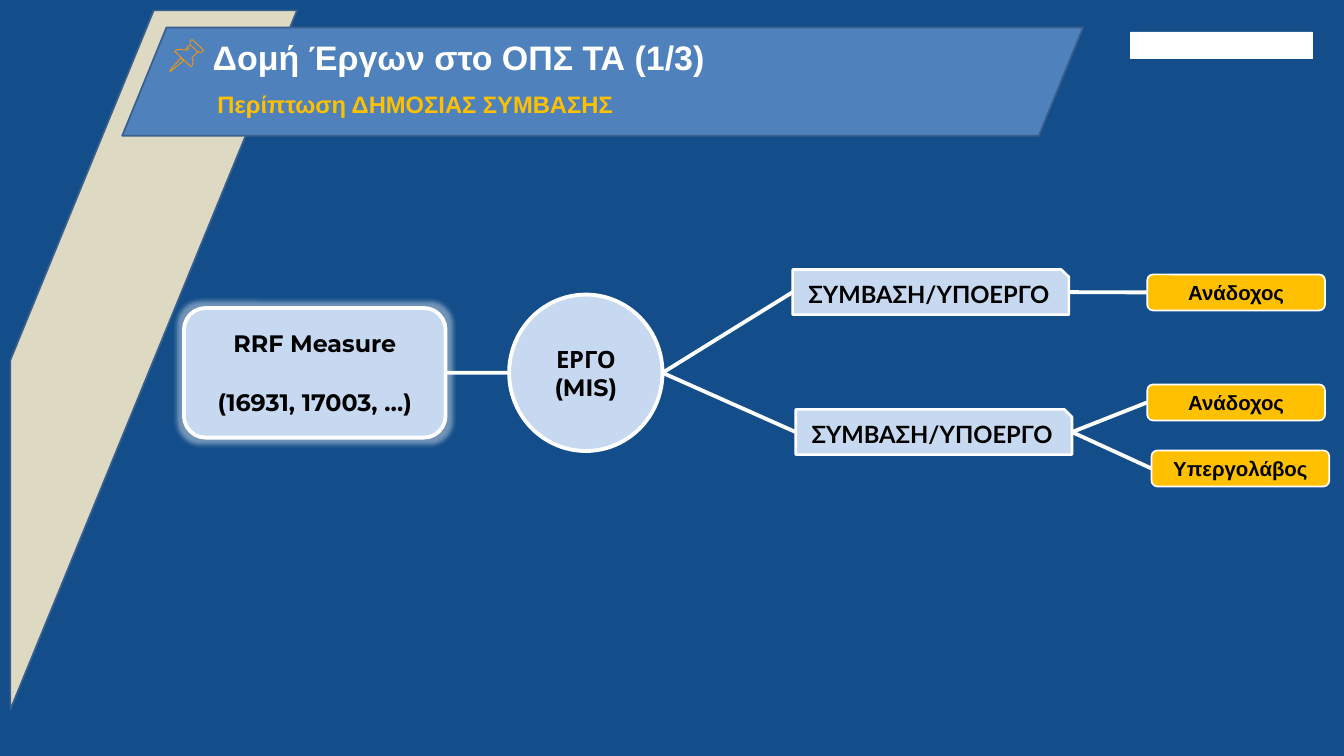
from lxml import etree
from pptx import Presentation
from pptx.dml.color import RGBColor
from pptx.enum.shapes import MSO_CONNECTOR, MSO_SHAPE
from pptx.enum.text import MSO_ANCHOR as ANCHOR, MSO_AUTO_SIZE as AUTO_SIZE, PP_ALIGN as ALIGN
from pptx.oxml import parse_xml
from pptx.oxml.ns import nsdecls, qn
from pptx.util import Inches, Pt

NAVY, BAND, EDGE, SAND = "134E8A", "4F81BD", "3A5F8C", "DDD9C3"
PALE, AMBER, ORANGE, WHITE, BLACK = "C6D9F1", "FFC000", "FF9800", "FFFFFF", "000000"
TOP, LEFT, BOTTOM, RIGHT = range(4)

# Pushpin outlines in hundredths of an inch from its corner: points, closed
PIN_PARTS = [
    ([(18, 30), (1, 49), (0, 52), (3, 50), (23, 34)], True),
    ([(33, 8), (46, 20), (50, 21), (54, 19), (55, 17), (37, 0), (35, 0), (33, 3)], True),
    ([(33, 8), (24, 17), (18, 16), (12, 16), (8, 19), (9, 20), (33, 43),
      (35, 44), (37, 41), (38, 36), (36, 29), (46, 20)], False),
    ([(26, 18), (32, 13)], False),
]


def color(value):
    return RGBColor.from_string(value)


def write(shape, lines, font, size, text_color, align=ALIGN.CENTER,
          anchor=ANCHOR.MIDDLE, gap=0):
    frame = shape.text_frame
    frame.word_wrap = True
    frame.auto_size = AUTO_SIZE.NONE
    frame.vertical_anchor = anchor
    frame.text = "\n".join(lines)
    for index, paragraph in enumerate(frame.paragraphs):
        paragraph.alignment = align
        if index and gap:
            paragraph.space_before = Pt(gap)
        paragraph.font.name = font
        paragraph.font.size = Pt(size)
        paragraph.font.bold = True
        paragraph.font.color.rgb = color(text_color)


def place(shape, box):
    shape.left, shape.top, shape.width, shape.height = map(Inches, box)


def add_block(slide, kind, box, fill, line, line_width):
    shape = slide.shapes.add_shape(kind, *map(Inches, box))
    shape.shadow.inherit = False
    shape.fill.solid()
    shape.fill.fore_color.rgb = color(fill)
    shape.line.color.rgb = color(line)
    shape.line.width = Pt(line_width)
    return shape


def add_glow(shape):
    effects = shape.element.spPr.find(qn("a:effectLst"))
    effects.append(parse_xml(
        f'<a:glow {nsdecls("a")} rad="139700"><a:srgbClr val="{WHITE}">'
        '<a:alpha val="40000"/></a:srgbClr></a:glow>'))


def link(slide, start, end, source=None, target=None):
    connector = slide.shapes.add_connector(
        MSO_CONNECTOR.STRAIGHT, *map(Inches, (*start, *end)))
    connector.line.color.rgb = color(WHITE)
    connector.line.width = Pt(4.5)
    etree.SubElement(connector.element.spPr, qn("a:effectLst"))
    if source is not None:
        connector.begin_connect(source, RIGHT)
    if target is not None:
        connector.end_connect(target, LEFT)


def add_pin(slide, left, top):
    for points, closed in PIN_PARTS:
        builder = slide.shapes.build_freeform(*points[0], scale=Inches(0.01))
        builder.add_line_segments(points[1:], close=closed)
        part = builder.convert_to_shape(Inches(left), Inches(top))
        part.shadow.inherit = False
        part.fill.background()
        part.line.color.rgb = color(ORANGE)
        part.line.width = Pt(0.96)


def add_header(slide, left, top, width, height):
    # Sloping stripe and title band
    add_block(slide, MSO_SHAPE.DIAGONAL_STRIPE,
              (left - 1.83, top - 0.28, 4.69, 11.44), SAND, EDGE, 2)
    band = add_block(slide, MSO_SHAPE.PARALLELOGRAM, (left, top, width, height), BAND, EDGE, 2)
    band.adjustments[0] = 0.409

    # Title, raised above the band
    title = slide.shapes.title
    title.element.getparent().append(title.element)
    place(title, (left + 1.38, top + 0.1, 11.66, 0.77))
    write(title, ["Δομή Έργων στο ΟΠΣ ΤΑ (1/3)"], "Arial", 40, WHITE, ALIGN.LEFT, ANCHOR.TOP)
    add_pin(slide, left + 0.78, top + 0.2)

    # Subtitle
    subtitle = slide.shapes.add_textbox(
        *map(Inches, (left + 1.46, top + 0.97, 9.99, 0.57)))
    write(subtitle, ["Περίπτωση ΔΗΜΟΣΙΑΣ ΣΥΜΒΑΣΗΣ"], "Arial", 28, AMBER, ALIGN.LEFT, ANCHOR.TOP)


def add_contract(slide, left, top):
    contract = add_block(slide, MSO_SHAPE.SNIP_1_RECTANGLE,
                         (left, top, 4.52, 0.74), PALE, WHITE, 3)
    write(contract, ["ΣΥΜΒΑΣΗ/ΥΠΟΕΡΓΟ"], "Lato", 28, BLACK)
    return contract


def add_party(slide, label, left, top):
    party = add_block(slide, MSO_SHAPE.ROUNDED_RECTANGLE,
                      (left, top, 2.91, 0.59), AMBER, WHITE, 2)
    write(party, [label], "Arial", 24, BLACK)
    return party


def add_project_tree(slide, left, top):
    # Measure and project, both centred on one axis
    axis = top + 1.69
    measure = add_block(slide, MSO_SHAPE.ROUNDED_RECTANGLE,
                        (left, axis - 1.06, 4.28, 2.12), PALE, WHITE, 4.5)
    add_glow(measure)
    write(measure, ["RRF Measure", "(16931, 17003, …)"], "Montserrat", 28, BLACK, gap=36)

    project_left, project_right = left + 5.32, left + 7.83
    project = add_block(slide, MSO_SHAPE.OVAL,
                        (project_left, axis - 1.28, 2.51, 2.56), PALE, WHITE, 4.5)
    write(project, ["ΕΡΓΟ", "(MIS)"], "Montserrat", 28, BLACK)
    link(slide, (left + 4.28, axis), (project_left, axis), source=measure)

    # Contracts, each with its parties
    branches = [
        (9.96, 0, [("Ανάδοχος", 15.76, 0.08)]),
        (10.01, 2.29, [("Ανάδοχος", 15.76, 1.88), ("Υπεργολάβος", 15.83, 2.96)]),
    ]
    for contract_x, contract_y, parties in branches:
        x, y = left + contract_x, top + contract_y
        contract = add_contract(slide, x, y)
        link(slide, (project_right, axis), (x, y + 0.37), target=contract)
        for label, party_x, party_y in parties:
            party = add_party(slide, label, left + party_x, top + party_y)
            link(slide, (x + 4.52, y + 0.37), (left + party_x, top + party_y + 0.3),
                 contract, party)


def main():
    presentation = Presentation()
    presentation.slide_width = Inches(21.99)
    presentation.slide_height = Inches(12.37)
    slide = presentation.slides.add_slide(presentation.slide_layouts[5])
    slide.background.fill.solid()
    slide.background.fill.fore_color.rgb = color(NAVY)

    add_header(slide, 2, 0.45, 15.72, 1.77)
    # Plain block in the top right corner
    add_block(slide, MSO_SHAPE.RECTANGLE, (18.5, 0.52, 2.97, 0.44), WHITE, WHITE, 0.5)
    add_project_tree(slide, 3.01, 4.41)
    presentation.save("out.pptx")


if __name__ == "__main__":
    main()
